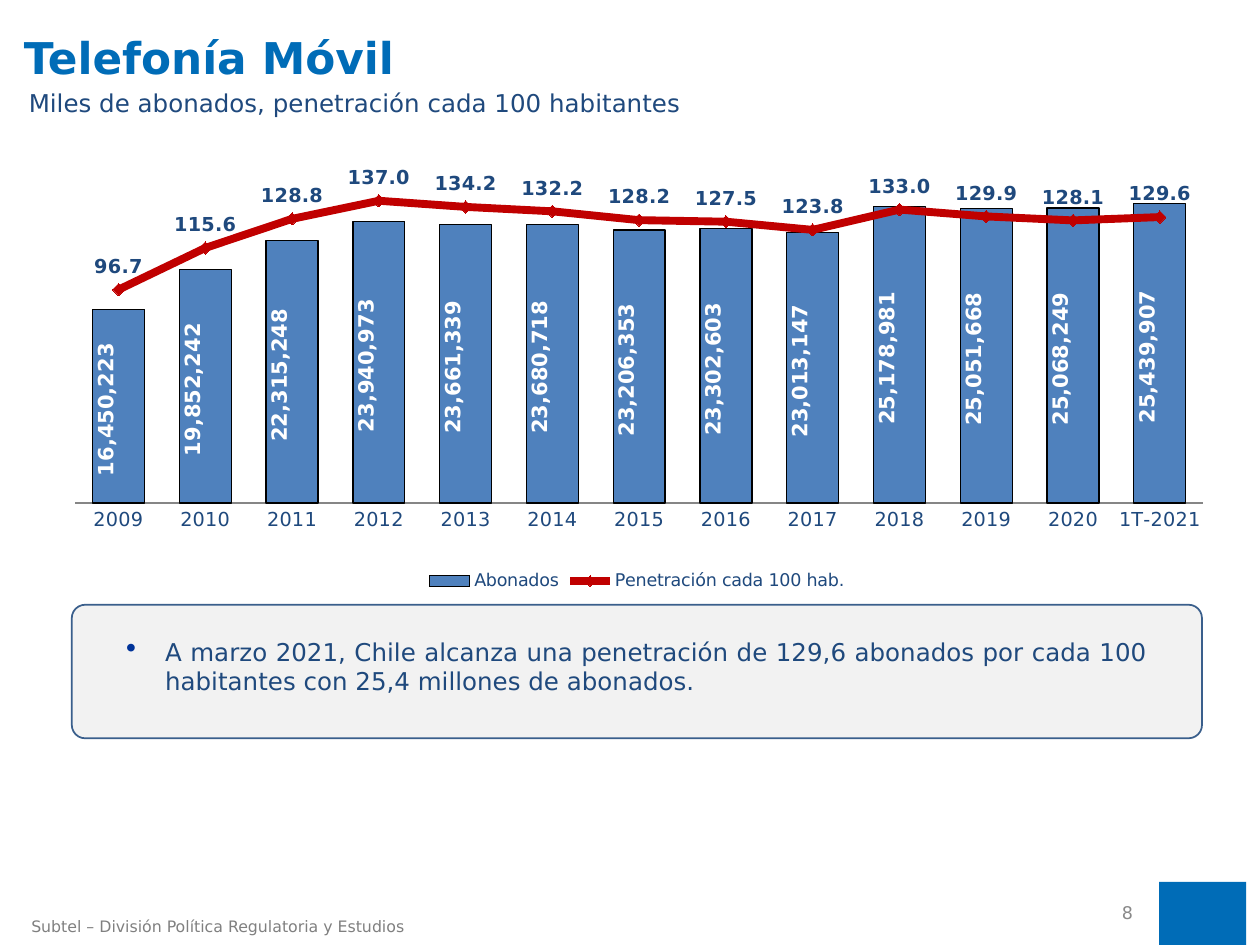
from copy import deepcopy

from lxml.etree import SubElement
from pptx import Presentation
from pptx.chart.data import CategoryChartData
from pptx.dml.color import RGBColor
from pptx.enum.chart import (XL_CHART_TYPE as ChartType, XL_LABEL_POSITION as LabelPos,
                             XL_LEGEND_POSITION as LegendPos, XL_MARKER_STYLE as Marker,
                             XL_TICK_LABEL_POSITION as TickLabel, XL_TICK_MARK as Tick)
from pptx.enum.shapes import MSO_SHAPE as Shape
from pptx.enum.text import MSO_ANCHOR as Anchor, PP_ALIGN as Align
from pptx.oxml import parse_xml
from pptx.oxml.ns import nsdecls, qn
from pptx.util import Inches, Pt

FONT = "DejaVu Sans"
BLUE = RGBColor(0x00, 0x6C, 0xB7)
NAVY = RGBColor(0x1F, 0x49, 0x7D)
BAR_BLUE = RGBColor(0x4F, 0x81, 0xBD)
DARK_RED = RGBColor(0xC0, 0x00, 0x00)
BORDER_BLUE = RGBColor(0x3A, 0x5F, 0x8C)
PALE_GRAY = RGBColor(0xF2, 0xF2, 0xF2)
AXIS_GRAY = RGBColor(0x86, 0x86, 0x86)
FOOTER_GRAY = RGBColor(0x80, 0x80, 0x80)
NUMBER_GRAY = RGBColor(0x89, 0x89, 0x89)
BLACK = RGBColor(0, 0, 0)
WHITE = RGBColor(0xFF, 0xFF, 0xFF)

PERIODS = [str(year) for year in range(2009, 2021)] + ["1T-2021"]
SUBSCRIBERS = [16450223, 19852242, 22315248, 23940973, 23661339, 23680718, 23206353,
               23302603, 23013147, 25178981, 25051668, 25068249, 25439907]
PENETRATION = [96.7, 115.6, 128.8, 137, 134.2, 132.2, 128.2, 127.5, 123.8, 133,
               129.9, 128.1, 129.6]
COUNT_FORMAT = r"_-* #,##0\ _€_-;\-* #,##0\ _€_-"
PLOT_LAYOUT = {"x": 0.018, "y": 0.041, "w": 0.968, "h": 0.759}


def style_font(font, size, color, bold=False):
    """Apply the slide typeface with a size, colour and weight."""
    font.name, font.size, font.bold = FONT, Pt(size), bold
    font.color.rgb = color


def write_text(shape, text, size, color, bold=False, align=Align.LEFT,
               anchor=Anchor.TOP, wrap=True):
    """Write one formatted paragraph into a shape and return it."""
    frame = shape.text_frame
    frame.word_wrap, frame.vertical_anchor = wrap, anchor
    paragraph = frame.paragraphs[0]
    paragraph.alignment = align
    run = paragraph.add_run()
    run.text = text
    style_font(run.font, size, color, bold)
    return paragraph


def add_label(slide, box, text, size, color, **text_format):
    """Add a text box at a box given in inches."""
    label = slide.shapes.add_textbox(*map(Inches, box))
    write_text(label, text, size, color, **text_format)


def add_block(slide, kind, box, fill, border=None):
    """Add a flat filled shape with an optional border."""
    block = slide.shapes.add_shape(kind, *map(Inches, box))
    block.shadow.inherit = False
    block.fill.solid()
    block.fill.fore_color.rgb = fill
    if border is None:
        block.line.fill.background()
    else:
        block.line.color.rgb, block.line.width = border, Pt(1)
    return block


def add_bullet(paragraph, indent, color):
    """Give a paragraph a hanging round bullet."""
    properties = paragraph._p.get_or_add_pPr()
    properties.set("marL", str(Inches(indent)))
    properties.set("indent", str(-Inches(indent)))
    bullet_color = SubElement(properties, qn("a:buClr"))
    SubElement(bullet_color, qn("a:srgbClr"), val=color)
    SubElement(properties, qn("a:buSzPct"), val="120000")
    SubElement(properties, qn("a:buChar"), char="•")


def add_message(slide):
    """Add the rounded panel with the key finding."""
    panel = add_block(slide, Shape.ROUNDED_RECTANGLE, (0.57, 4.8, 8.97, 1.06),
                      PALE_GRAY, BORDER_BLUE)
    panel.adjustments[0] = 0.1
    frame = panel.text_frame
    frame.margin_left = frame.margin_right = Inches(0.4)
    frame.margin_bottom = Inches(0.31)
    finding = write_text(panel, "A marzo 2021, Chile alcanza una penetración de 129,6 abonados "
                         "por cada 100 habitantes con 25,4 millones de abonados.",
                         14, NAVY, align=Align.JUSTIFY, anchor=Anchor.BOTTOM)
    finding.space_after = Pt(4)
    add_bullet(finding, 0.31, "003399")


def label_series(series, position, number_format, size, color):
    """Show bold values on a series."""
    labels = series.data_labels
    labels.show_value, labels.position = True, position
    labels.number_format, labels.number_format_is_linked = number_format, False
    style_font(labels.font, size, color, True)
    return labels


def style_axes(chart):
    """Show the periods and hide the value scale."""
    periods, values = chart.category_axis, chart.value_axis
    for axis in (periods, values):
        axis.major_tick_mark = axis.minor_tick_mark = Tick.NONE
        axis.has_major_gridlines = False
    style_font(periods.tick_labels.font, 11, NAVY)
    periods.format.line.color.rgb = AXIS_GRAY
    values.minimum_scale, values.maximum_scale = 0, 30_000_000
    values.tick_label_position = TickLabel.NONE
    values.format.line.fill.background()


def set_plot_layout(plot_area):
    """Fix the inner plot area inside the chart."""
    for old in plot_area.findall(qn("c:layout")):
        plot_area.remove(old)
    modes = '<c:xMode val="edge"/><c:yMode val="edge"/>'
    sizes = "".join(f'<c:{key} val="{value}"/>' for key, value in PLOT_LAYOUT.items())
    plot_area.insert(0, parse_xml(
        f'<c:layout {nsdecls("c")}><c:manualLayout><c:layoutTarget val="inner"/>'
        f'{modes}{sizes}</c:manualLayout></c:layout>'))


def move_to_line(chart, maximum):
    """Move the second series to a line plot on its own hidden axes."""
    plot_area = chart._chartSpace.chart.plotArea
    bars = plot_area.find(qn("c:barChart"))
    series = bars.findall(qn("c:ser"))[1]
    for bar_setting in series.findall(qn("c:invertIfNegative")):
        series.remove(bar_setting)
    line_plot = parse_xml(
        f'<c:lineChart {nsdecls("c")}><c:grouping val="standard"/><c:varyColors val="0"/>'
        '<c:marker val="1"/><c:axId val="5001"/><c:axId val="5002"/></c:lineChart>')
    line_plot.insert(2, series)
    bars.addnext(line_plot)

    periods = plot_area.find(qn("c:catAx"))
    values = plot_area.find(qn("c:valAx"))
    right_values, hidden_periods = deepcopy(values), deepcopy(periods)
    for axis, own, other in ((right_values, "5002", "5001"), (hidden_periods, "5001", "5002")):
        axis.find(qn("c:axId")).set("val", own)
        axis.find(qn("c:crossAx")).set("val", other)
    right_values.find(qn("c:axPos")).set("val", "r")
    right_values.find(qn("c:crosses")).set("val", "max")
    right_values.find(qn("c:scaling")).find(qn("c:max")).set("val", str(maximum))
    hidden_periods.find(qn("c:delete")).set("val", "1")
    values.addnext(right_values)
    right_values.addnext(hidden_periods)
    set_plot_layout(plot_area)


def add_mobile_chart(slide):
    """Add the subscriber columns with the penetration line."""
    data = CategoryChartData()
    data.categories = PERIODS
    data.add_series("Abonados", SUBSCRIBERS, COUNT_FORMAT)
    data.add_series("Penetración cada 100 hab.", PENETRATION, "#,##0.0")
    chart = slide.shapes.add_chart(ChartType.COLUMN_CLUSTERED,
                                   *map(Inches, (0.43, 1.04, 9.25, 3.69)), data).chart
    style_font(chart.font, 10, NAVY)
    chart.has_title = False
    chart.has_legend = True
    chart.legend.position, chart.legend.include_in_layout = LegendPos.BOTTOM, False
    style_axes(chart)
    move_to_line(chart, 160)

    columns, line_plot = chart.plots
    columns.vary_by_categories = False
    columns.gap_width, columns.overlap = 67, -25
    subscribers, penetration = columns.series[0], line_plot.series[0]
    subscribers.format.fill.solid()
    subscribers.format.fill.fore_color.rgb = BAR_BLUE
    subscribers.format.line.color.rgb = BLACK
    subscribers.format.line.width = Pt(0.75)
    counts = label_series(subscribers, LabelPos.CENTER, COUNT_FORMAT, 12, WHITE)
    turned = counts._element.find(qn("c:txPr")).find(qn("a:bodyPr"))
    turned.set("rot", "-5400000")
    turned.set("vert", "horz")

    penetration.smooth = False
    penetration.format.line.color.rgb, penetration.format.line.width = DARK_RED, Pt(4.5)
    marker = penetration.marker
    marker.style, marker.size = Marker.DIAMOND, 7
    marker.format.fill.solid()
    marker.format.fill.fore_color.rgb = DARK_RED
    marker.format.line.color.rgb = DARK_RED
    label_series(penetration, LabelPos.ABOVE, "#,##0.0", 11, NAVY)


def main():
    """Build and save the mobile telephony slide."""
    deck = Presentation()
    deck.slide_width, deck.slide_height = Inches(10), Inches(7.5)
    slide = deck.slides.add_slide(deck.slide_layouts[5])
    title = slide.shapes.title
    title.left, title.top, title.width, title.height = map(Inches, (0.09, 0.19, 9.09, 0.75))
    write_text(title, "Telefonía Móvil", 25, BLUE, bold=True)
    add_block(slide, Shape.RECTANGLE, (9.2, 7, 0.69, 0.5), BLUE)
    add_mobile_chart(slide)
    add_message(slide)
    add_label(slide, (0.13, 0.65, 5.45, 0.34),
              "Miles de abonados, penetración cada 100 habitantes", 14, NAVY, wrap=False)
    add_label(slide, (0.15, 7.23, 5.33, 0.25),
              "Subtel – División Política Regulatoria y Estudios", 9, FOOTER_GRAY)
    add_label(slide, (6.76, 7.14, 2.33, 0.21), "8", 10, NUMBER_GRAY,
              align=Align.RIGHT, anchor=Anchor.MIDDLE)
    deck.save("out.pptx")


if __name__ == "__main__":
    main()
